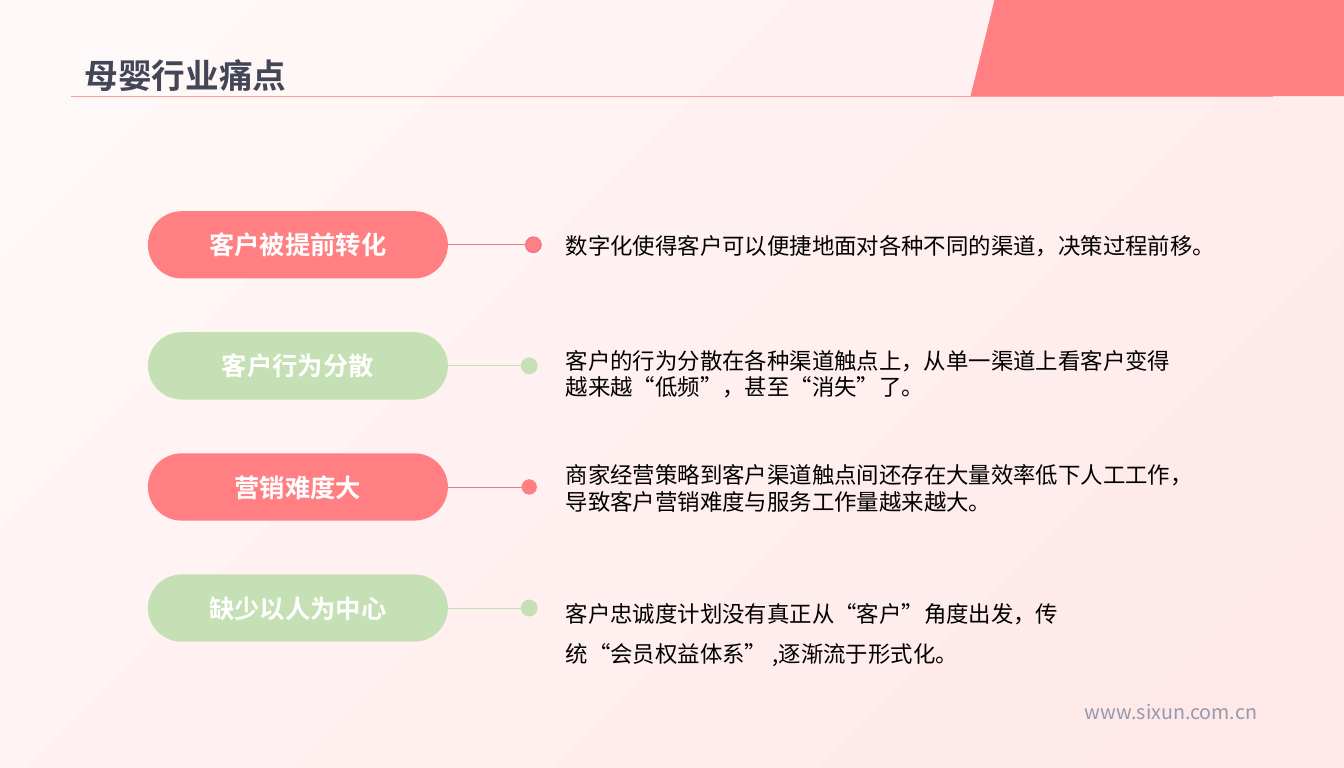
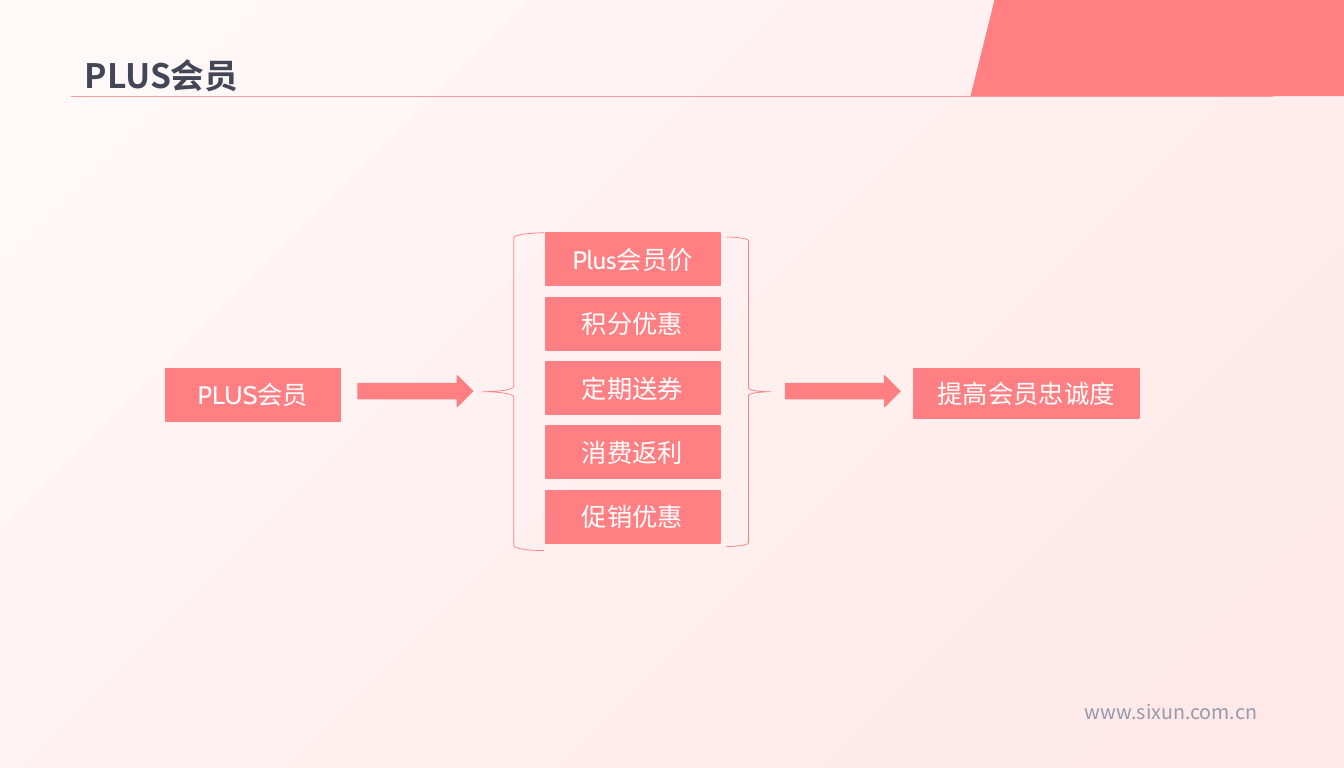
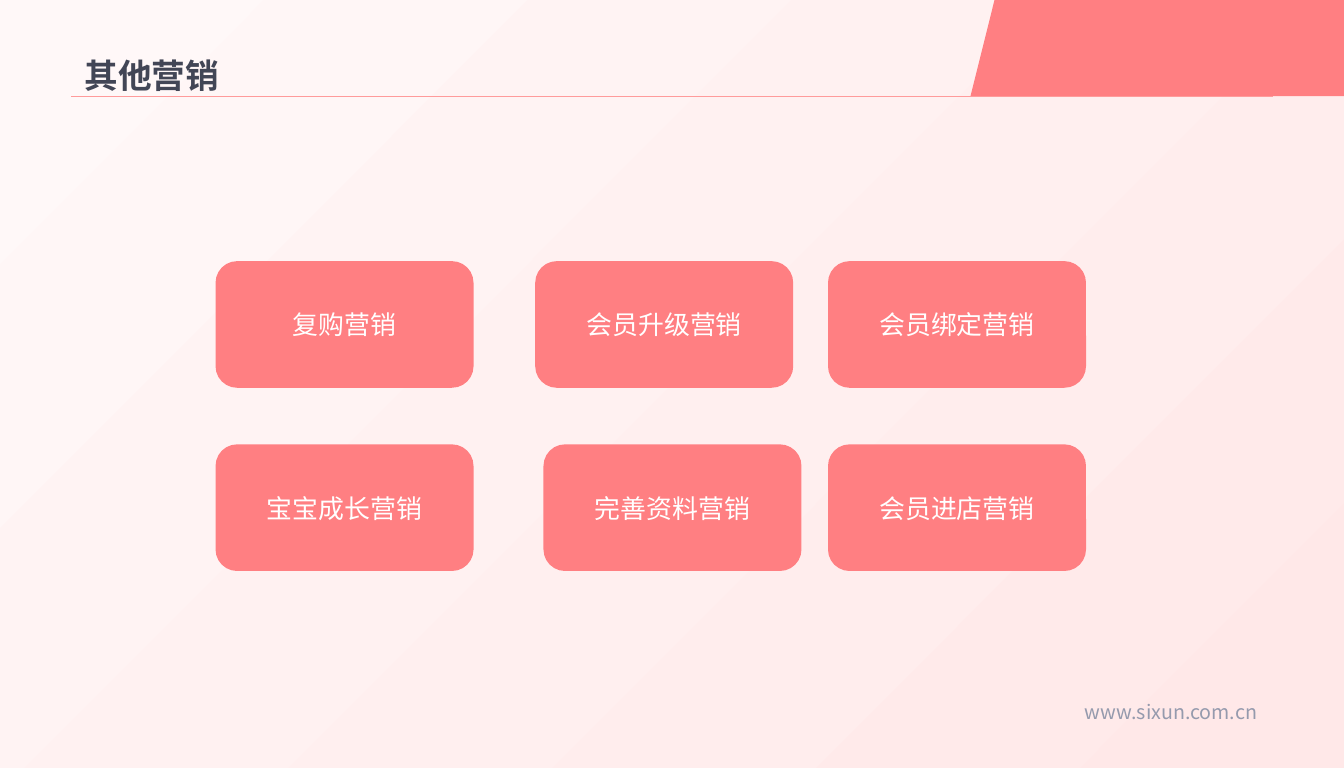
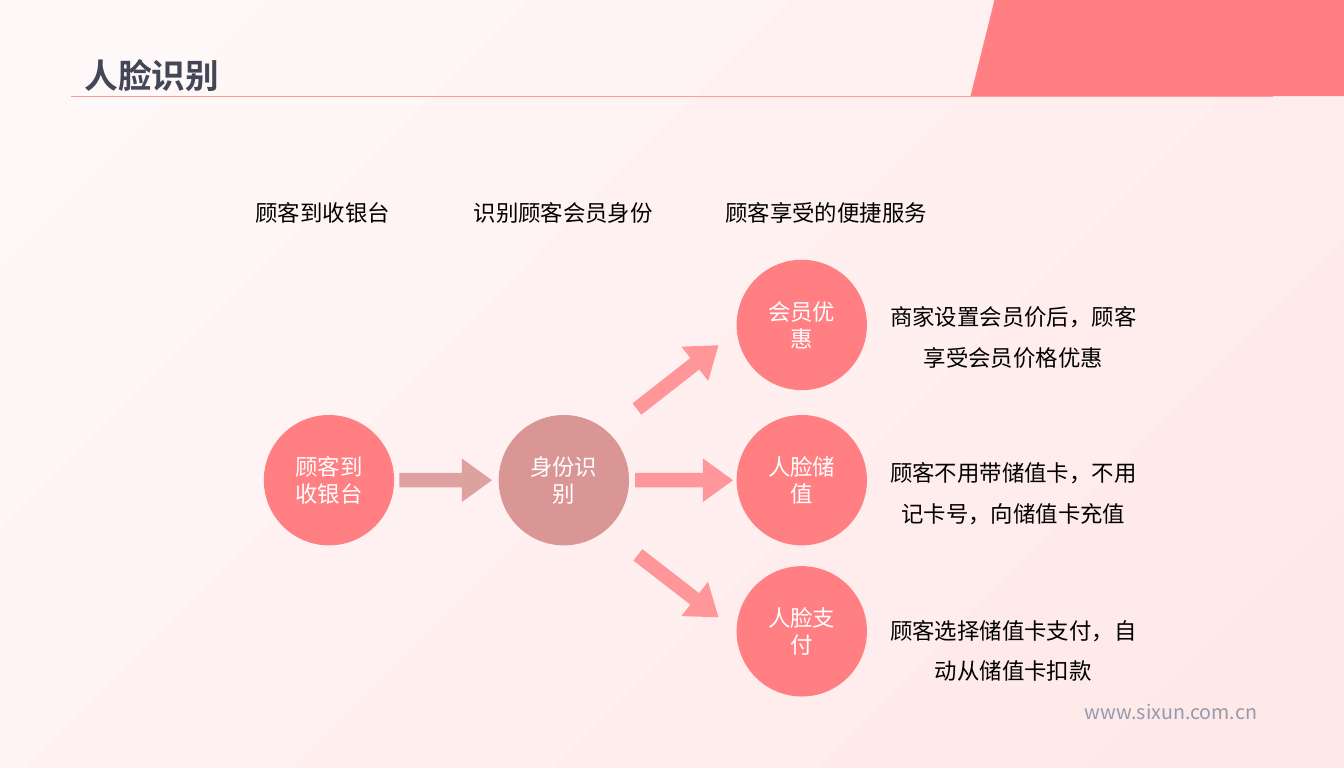
from math import atan2, degrees, hypot

from lxml import etree
from pptx import Presentation
from pptx.dml.color import RGBColor
from pptx.enum.shapes import MSO_CONNECTOR, MSO_SHAPE
from pptx.enum.text import MSO_ANCHOR, MSO_AUTO_SIZE, PP_ALIGN
from pptx.oxml.ns import qn
from pptx.util import Inches, Pt

LEFT, CENTER, RIGHT = PP_ALIGN.LEFT, PP_ALIGN.CENTER, PP_ALIGN.RIGHT
TOP, MIDDLE, BOTTOM = MSO_ANCHOR.TOP, MSO_ANCHOR.MIDDLE, MSO_ANCHOR.BOTTOM
RECT, ROUNDED, CIRCLE = MSO_SHAPE.RECTANGLE, MSO_SHAPE.ROUNDED_RECTANGLE, MSO_SHAPE.OVAL
ARROW, BAND = MSO_SHAPE.RIGHT_ARROW, MSO_SHAPE.PARALLELOGRAM
LEFT_BRACE, RIGHT_BRACE = MSO_SHAPE.LEFT_BRACE, MSO_SHAPE.RIGHT_BRACE
STRAIGHT = MSO_CONNECTOR.STRAIGHT
FIT = MSO_AUTO_SIZE.SHAPE_TO_FIT_TEXT
RIGHT_SIDE = 3

# The slide is a grid of square cells; every place and length is in cells
CELL = Inches(0.1)
COLUMNS, ROWS = 129.9, 74.2

COLORS = {
    "coral": "FF7F82", "green": "C5E0B4", "rose": "D99694", "pink": "E87A90",
    "rule": "FF9B9B", "title": "424656", "footer": "959AAD",
    "white": "FFFFFF", "black": "000000",
    "back_start": "FFF8F8", "back_end": "FFE8E8",
}
SANS, CABIN = "Noto Sans CJK SC", "Cabin"
BODY_SIZE, LABEL_SIZE = 15.6, 17.6


def rgb(name):
    return RGBColor.from_string(COLORS[name])


def cells(*lengths):
    return [round(length * CELL) for length in lengths]


# Building blocks
def write(frame, lines, size, color, font=SANS, bold=False, align=LEFT, spacing=None):
    """Fill a text frame, one paragraph per line."""
    for index, line in enumerate(lines):
        paragraph = frame.paragraphs[0] if index == 0 else frame.add_paragraph()
        paragraph.text = line
        paragraph.alignment = align
        if spacing:
            paragraph.line_spacing = spacing
        style = paragraph.font
        style.size, style.bold, style.name = Pt(size), bold, font
        style.color.rgb = rgb(color)
        defaults = paragraph._p.pPr.find(qn("a:defRPr"))
        etree.SubElement(defaults, qn("a:ea"), typeface=SANS)


def add_text(slide, at, lines, size=BODY_SIZE, color="black", wrap=True,
             anchor=TOP, fit=True, inset=True, **style):
    box = slide.shapes.add_textbox(*cells(*at))
    frame = box.text_frame
    frame.word_wrap = wrap
    frame.vertical_anchor = anchor
    if fit:
        frame.auto_size = FIT
    if not inset:
        frame.margin_left = frame.margin_right = 0
        frame.margin_top = frame.margin_bottom = 0
    write(frame, lines, size, color, **style)


def add_figure(slide, kind, at, fill=None, line=None, width=1, alpha=None):
    figure = slide.shapes.add_shape(kind, *cells(*at))
    figure.shadow.inherit = False
    if fill:
        figure.fill.solid()
        figure.fill.fore_color.rgb = rgb(fill)
    else:
        figure.fill.background()
    if alpha:
        tint = figure._element.spPr.find(".//" + qn("a:srgbClr"))
        etree.SubElement(tint, qn("a:alpha"), val=str(alpha * 1000))
    if line:
        figure.line.color.rgb = rgb(line)
        figure.line.width = Pt(width)
    else:
        figure.line.fill.background()
    return figure


def add_label(slide, kind, at, label, fill="coral", line=None, size=LABEL_SIZE, **style):
    """A filled shape with centred white text."""
    figure = add_figure(slide, kind, at, fill, line)
    figure.text_frame.vertical_anchor = MIDDLE
    write(figure.text_frame, [label], size, "white", align=CENTER, **style)
    return figure


def add_line(slide, start, end, color):
    line = slide.shapes.add_connector(STRAIGHT, *cells(*start, *end))
    line.line.color.rgb = rgb(color)
    line.line.width = Pt(0.5)
    etree.SubElement(line._element.spPr, qn("a:effectLst"))
    return line


def add_flow_arrow(slide, tail, tip, color, alpha):
    """A translucent block arrow from tail to tip at any angle."""
    height, shaft, head = 4.2, 1.4, 2.9
    across, down = tip[0] - tail[0], tip[1] - tail[1]
    length = hypot(across, down)
    left = (tail[0] + tip[0] - length) / 2
    top = (tail[1] + tip[1] - height) / 2
    arrow = add_figure(slide, ARROW, (left, top, length, height), color, alpha=alpha)
    arrow.adjustments[0] = shaft / height
    arrow.adjustments[1] = head / height
    arrow.rotation = degrees(atan2(down, across))


# What the slides share
def set_background(prs):
    fill = prs.slide_master.background.fill
    fill.gradient()
    fill.gradient_angle = 315
    for stop, color in zip(fill.gradient_stops, ("back_start", "back_end")):
        stop.color.rgb = rgb(color)


def add_page(prs, title):
    slide = prs.slides.add_slide(prs.slide_layouts[6])
    add_figure(slide, BAND, (93.8, 0, 39.1, 9.3), "coral")
    add_text(slide, (101, 67.1, 21.5, 3.3), ["www.sixun.com.cn"], 13.7, "footer", align=RIGHT)
    add_line(slide, (6.9, 9.3), (123, 9.3), "rule")
    add_text(slide, (7.2, 3.4, 46.1, 6.3), [title], 23.4, "title", wrap=False,
             anchor=BOTTOM, fit=False, bold=True, spacing=2)
    return slide


# The four slides
def pain_points(prs):
    slide = add_page(prs, "母婴行业痛点")
    first_top, step, height, dot = 20.4, 11.7, 6.5, 1.5
    # label, fill, line, dot outline, dot left, text top, text width, wrap, spacing, text
    points = [
        ("客户被提前转化", "coral", "pink", "pink", 50.8, 21.9, 65.4, False, None,
         ["数字化使得客户可以便捷地面对各种不同的渠道，决策过程前移。"]),
        ("客户行为分散", "green", "green", "green", 50.4, 33, 61, False, None,
         ["客户的行为分散在各种渠道触点上，从单一渠道上看客户变得",
          "越来越“低频”，甚至“消失”了。"]),
        ("营销难度大", "coral", "pink", None, 50.4, 44.1, 63.2, False, None,
         ["商家经营策略到客户渠道触点间还存在大量效率低下人工工作，",
          "导致客户营销难度与服务工作量越来越大。"]),
        ("缺少以人为中心", "green", "green", "green", 50.4, 56.2, 53.1, True, 1.5,
         ["客户忠诚度计划没有真正从“客户”角度出发，传统“会员权益体系” ,逐渐流于形式化。"]),
    ]
    for row, point in enumerate(points):
        label, fill, line, outline, dot_left, text_top, width, wrap, spacing, text = point
        top = first_top + row * step
        middle = top + height / 2
        pill = add_label(slide, ROUNDED, (14.3, top, 29, height), label, fill, bold=True)
        pill.adjustments[0] = 0.5
        link = add_line(slide, (43.3, middle), (dot_left + dot / 2, middle), line)
        link.begin_connect(pill, RIGHT_SIDE)
        add_figure(slide, CIRCLE, (dot_left, middle - dot / 2, dot, dot), fill, outline)
        add_text(slide, (53.7, text_top, width, 3.6), text, wrap=wrap, spacing=spacing)


def plus_members(prs):
    slide = add_page(prs, "PLUS会员")
    boxes = [((16, 35.6, 16.9, 5.1), "PLUS会员"), ((88.3, 35.6, 21.8, 4.8), "提高会员忠诚度")]
    benefits = ["Plus会员价", "积分优惠", "定期送券", "消费返利", "促销优惠"]
    boxes += [((52.7, 22.5 + 6.22 * row, 16.9, 5.1), benefit)
              for row, benefit in enumerate(benefits)]
    for at, label in boxes:
        add_label(slide, RECT, at, label, line="coral", font=CABIN)
    add_figure(slide, LEFT_BRACE, (46.7, 22.5, 5.9, 30.7), line="coral", width=0.5)
    add_figure(slide, RIGHT_BRACE, (70.2, 22.9, 4.3, 29.9), line="coral", width=0.5)
    for left in (34.6, 75.9):
        add_figure(slide, ARROW, (left, 36.3, 11.1, 3), "coral", "coral", 0.75)


def other_marketing(prs):
    slide = add_page(prs, "其他营销")
    card_rows = [
        (25.3, [(20.9, "复购营销"), (51.8, "会员升级营销"), (80.1, "会员绑定营销")]),
        (43, [(20.9, "宝宝成长营销"), (52.6, "完善资料营销"), (80.1, "会员进店营销")]),
    ]
    for top, cards in card_rows:
        for left, label in cards:
            add_label(slide, ROUNDED, (left, top, 24.8, 12.1), label, line="coral",
                      size=18, font=CABIN)


def face_recognition(prs):
    slide = add_page(prs, "人脸识别")
    diameter = 12.6
    # Steps and services
    steps = [
        (25.5, 40.1, "顾客到收银台", "coral"), (48.2, 40.1, "身份识别", "rose"),
        (71.2, 25.1, "会员优惠", "coral"), (71.2, 40.1, "人脸储值", "coral"),
        (71.2, 54.7, "人脸支付", "coral"),
    ]
    for left, top, label, fill in steps:
        add_label(slide, CIRCLE, (left, top, diameter, diameter), label, fill, size=BODY_SIZE)
    # Arrows between them
    arrows = [
        ((38.6, 46.4), (47.55, 46.4), "rose", 87),
        ((61.4, 46.4), (70.85, 46.4), "coral", 79),
        ((61.56, 39.52), (69.44, 33.36), "coral", 79),
        ((61.65, 53.61), (69.44, 59.64), "coral", 79),
    ]
    for tail, tip, color, alpha in arrows:
        add_flow_arrow(slide, tail, tip, color, alpha)
    # Column headings and service notes
    notes = [
        ((22.8, 17.9, 16.8, 3.9), "顾客到收银台"),
        ((45.3, 17.9, 18.3, 3.9), "识别顾客会员身份"),
        ((69.4, 17.9, 20.9, 3.9), "顾客享受的便捷服务"),
        ((85.7, 28, 24.5, 7.9), "商家设置会员价后，顾客享受会员价格优惠"),
        ((85.7, 43.1, 24.5, 7.9), "顾客不用带储值卡，不用记卡号，向储值卡充值"),
        ((85.7, 58.3, 24.5, 7.9), "顾客选择储值卡支付，自动从储值卡扣款"),
    ]
    for at, note in notes:
        add_text(slide, at, [note], inset=False, align=CENTER, spacing=1.5)


def main():
    prs = Presentation()
    prs.slide_width, prs.slide_height = cells(COLUMNS, ROWS)
    set_background(prs)
    for build in (pain_points, plus_members, other_marketing, face_recognition):
        build(prs)
    prs.save("out.pptx")


if __name__ == "__main__":
    main()
